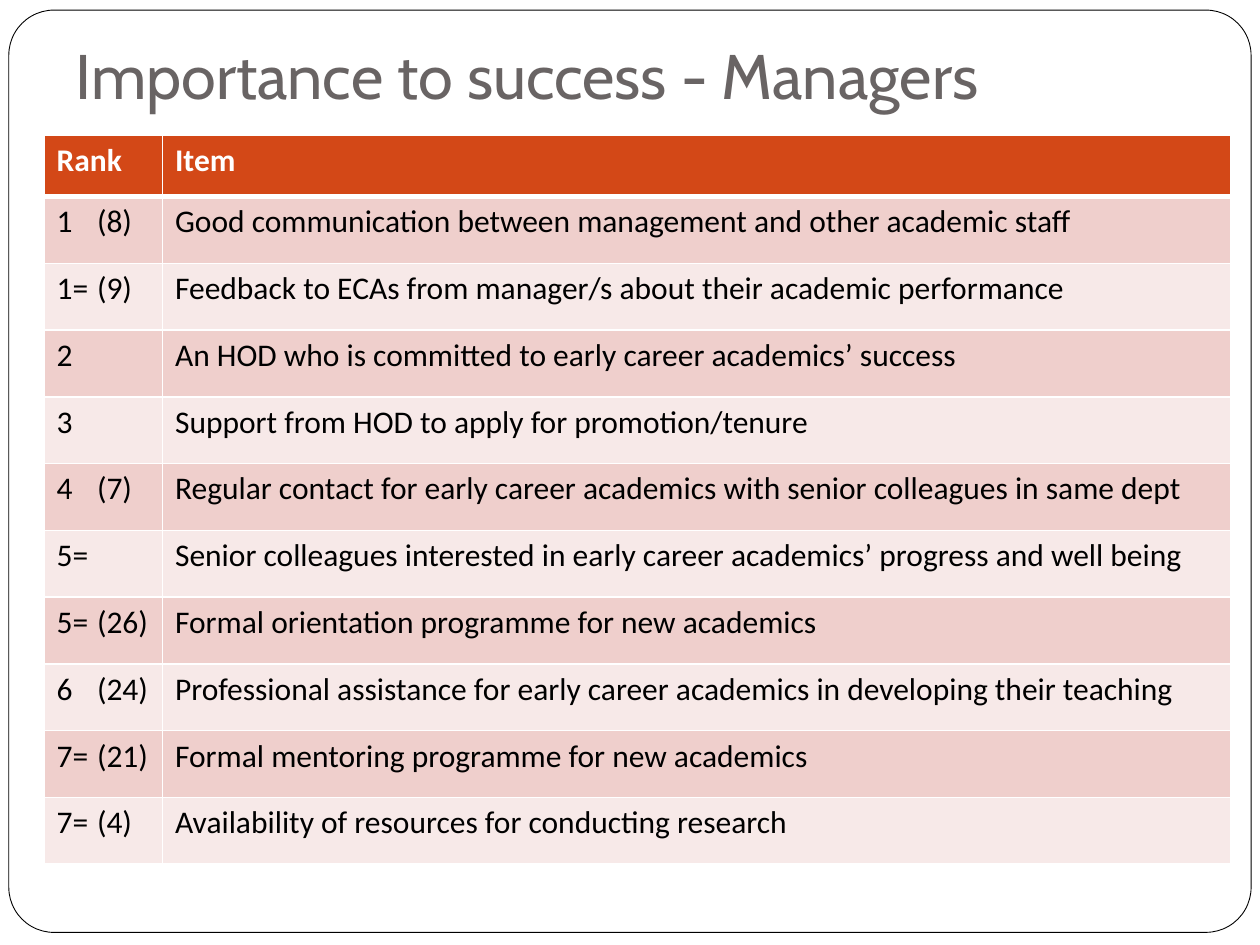
"""Build the slide that ranks what managers see as important to success."""

from dataclasses import dataclass
from typing import NamedTuple

from lxml.etree import SubElement
from pptx import Presentation
from pptx.dml.color import RGBColor
from pptx.enum.shapes import MSO_SHAPE
from pptx.enum.text import MSO_ANCHOR, MSO_AUTO_SIZE, PP_ALIGN
from pptx.oxml import parse_xml
from pptx.oxml.ns import nsdecls, qn
from pptx.util import Inches, Pt


@dataclass(frozen=True)
class Theme:
    """Colours, fonts and type sizes of the slide."""

    white: str = "FFFFFF"
    black: str = "000000"
    title: str = "696464"
    header: str = "D34817"
    bands: tuple[str, str] = ("EFCFCC", "F7E9E8")
    title_font: str = "Cabin"
    body_font: str = "Calibri"
    title_size: int = 36
    body_size: int = 18
    rule: int = 1
    header_rule: int = 3


class Box(NamedTuple):
    """A rectangle in inches."""

    left: float
    top: float
    width: float
    height: float


class Entry(NamedTuple):
    """One ranked item, with an optional second rank in brackets."""

    rank: str
    item: str
    other: str = ""


THEME = Theme()
FRAME = Box(0.07, 0.08, 9.86, 7.32)
TITLE = Box(0.5, 0.3, 9, 0.69)
TABLE = Box(0.35, 1.07, 9.42, 5.79)
RANK_WIDTH = 0.94
HEADER_HEIGHT = 0.49
RANK_TAB = 0.32
HEADER = Entry("Rank", "Item")
ENTRIES = [
    Entry("1", "Good communication between management and other academic staff", "(8)"),
    Entry("1=", "Feedback to ECAs from manager/s about their academic performance", "(9)"),
    Entry("2", "An HOD who is committed to early career academics’ success"),
    Entry("3", "Support from HOD to apply for promotion/tenure"),
    Entry("4", "Regular contact for early career academics with senior colleagues in same dept", "(7)"),
    Entry("5=", "Senior colleagues interested in early career academics’ progress and well being"),
    Entry("5=", "Formal orientation programme for new academics", "(26)"),
    Entry("6", "Professional assistance for early career academics in developing their teaching", "(24)"),
    Entry("7=", "Formal mentoring programme for new academics", "(21)"),
    Entry("7=", "Availability of resources for conducting research", "(4)"),
]


def inches(box: Box) -> list[Inches]:
    return [Inches(length) for length in box]


def add_run(para, text: str, font: str, size: int, colour: str, bold: bool = False) -> None:
    span = para.add_run()
    span.text = text
    span.font.name = font
    span.font.size = Pt(size)
    span.font.bold = bold
    span.font.color.rgb = RGBColor.from_string(colour)


def add_frame(page) -> None:
    frame = page.shapes.add_shape(MSO_SHAPE.ROUNDED_RECTANGLE, *inches(FRAME))
    frame.adjustments[0] = 0.049
    frame.shadow.inherit = False
    frame.fill.solid()
    frame.fill.fore_color.rgb = RGBColor.from_string(THEME.white)
    frame.line.color.rgb = RGBColor.from_string(THEME.black)
    frame.line.width = Pt(0.5)
    page.shapes.title.element.addprevious(frame.element)


def add_title(page, text: str) -> None:
    title = page.shapes.title
    title.left, title.top, title.width, title.height = inches(TITLE)
    body = title.text_frame
    body.auto_size = MSO_AUTO_SIZE.NONE
    body.vertical_anchor = MSO_ANCHOR.BOTTOM
    body.margin_bottom = Inches(0.1)
    para = body.paragraphs[0]
    para.alignment = PP_ALIGN.LEFT
    add_run(para, text, THEME.title_font, THEME.title_size, THEME.title)


def set_borders(cell, top: int, bottom: int) -> None:
    properties = cell._tc.get_or_add_tcPr()
    widths = {"lnL": THEME.rule, "lnR": THEME.rule, "lnT": top, "lnB": bottom}
    for position, (side, width) in enumerate(widths.items()):
        border = parse_xml(
            f'<a:{side} {nsdecls("a")} w="{Pt(width)}"><a:solidFill>'
            f'<a:srgbClr val="{THEME.white}"/></a:solidFill></a:{side}>'
        )
        properties.insert(position, border)


def add_tab_stop(para, position: float) -> None:
    tabs = SubElement(para._p.get_or_add_pPr(), qn("a:tabLst"))
    SubElement(tabs, qn("a:tab"), pos=str(Inches(position)), algn="l")


def fill_row(table, index: int, entry: Entry) -> None:
    is_header = index == 0
    fill = THEME.header if is_header else THEME.bands[(index - 1) % 2]
    colour = THEME.white if is_header else THEME.black
    top = THEME.header_rule if index == 1 else THEME.rule
    bottom = THEME.header_rule if is_header else THEME.rule
    rank = f"{entry.rank}\t{entry.other}" if entry.other else entry.rank
    for column, text in enumerate((rank, entry.item)):
        cell = table.cell(index, column)
        cell.fill.solid()
        cell.fill.fore_color.rgb = RGBColor.from_string(fill)
        set_borders(cell, top, bottom)
        para = cell.text_frame.paragraphs[0]
        if "\t" in text:
            add_tab_stop(para, RANK_TAB)
        add_run(para, text, THEME.body_font, THEME.body_size, colour, is_header)


def add_ranking(page) -> None:
    rows = [HEADER, *ENTRIES]
    table = page.shapes.add_table(len(rows), 2, *inches(TABLE)).table
    table.columns[0].width = Inches(RANK_WIDTH)
    table.columns[1].width = Inches(TABLE.width - RANK_WIDTH)
    entry_height = (TABLE.height - HEADER_HEIGHT) / len(ENTRIES)
    for index, entry in enumerate(rows):
        table.rows[index].height = Inches(entry_height if index else HEADER_HEIGHT)
        fill_row(table, index, entry)


def main() -> None:
    deck = Presentation()
    deck.slide_width, deck.slide_height = Inches(10), Inches(7.5)
    page = deck.slides.add_slide(deck.slide_layouts.get_by_name("Title Only"))
    add_frame(page)
    add_title(page, "Importance to success - Managers")
    add_ranking(page)
    deck.save("out.pptx")


if __name__ == "__main__":
    main()
